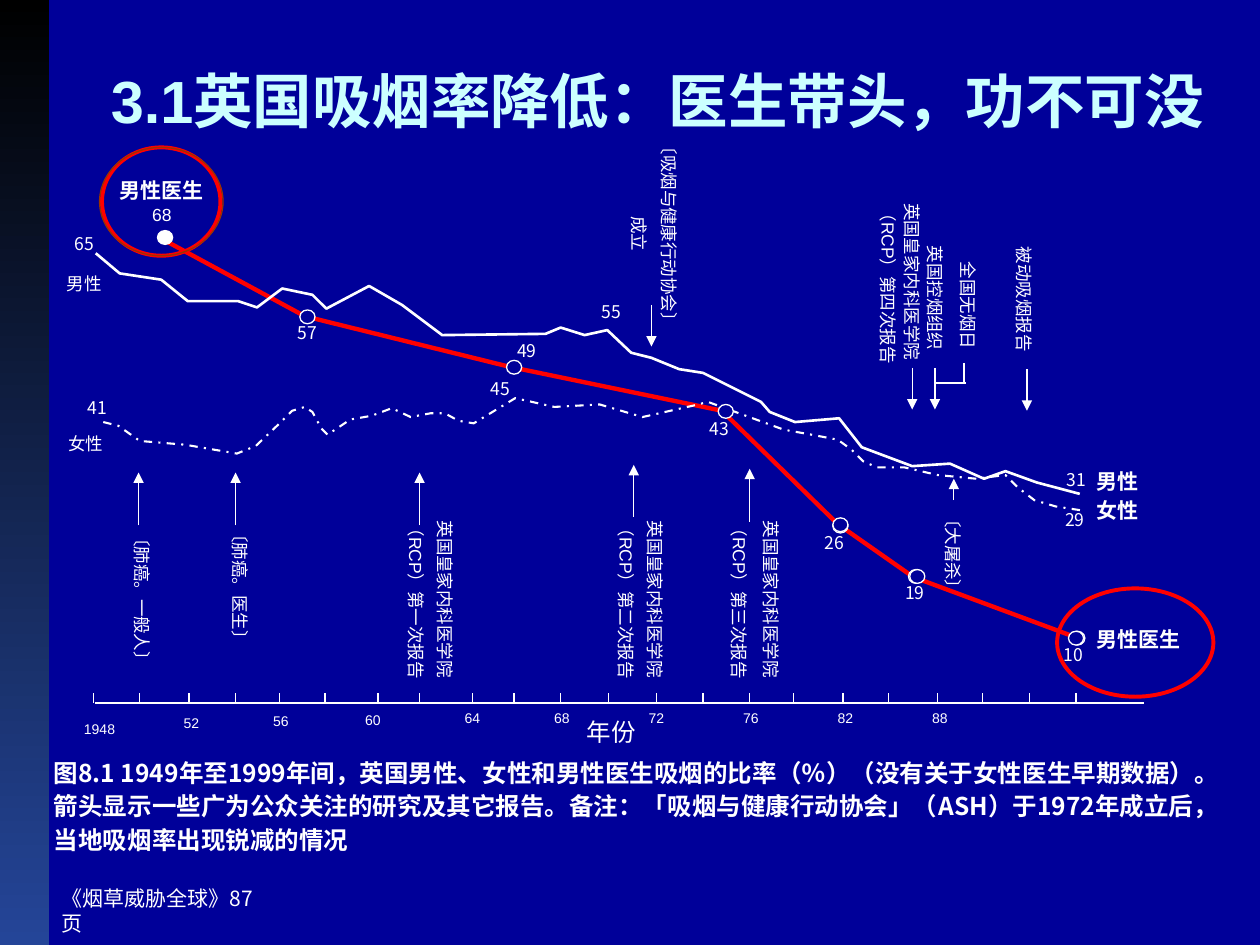
from dataclasses import dataclass

from lxml import etree
from pptx import Presentation
from pptx import util as u
from pptx.dml.color import RGBColor
from pptx.enum import dml, shapes, text
from pptx.oxml import ns

Inches = u.Inches


@dataclass(frozen=True)
class Theme:
    """Colours, fonts and type sizes of the slide."""
    background: str = "000099"
    ink: str = "FFFFFF"
    title: str = "CCFFFF"
    doctors: str = "FF0000"
    brown: str = "993300"
    bar_top: str = "000000"
    bar_bottom: str = "244598"
    latin: str = "Arial"
    chinese: str = "Noto Sans CJK SC"
    tick_size: int = 8
    label_size: int = 10
    name_size: int = 12
    caption_size: int = 14
    title_size: int = 34


THEME = Theme()

DOCTORS = [(1.33, 1.92), (2.42, 2.51), (4.04, 2.91), (5.73, 3.26), (6.65, 4.16), (7.25, 4.58), (8.49, 5.04)]
MEN = [(0.76, 2.01), (0.95, 2.17), (1.28, 2.22), (1.49, 2.39), (1.89, 2.39), (2.04, 2.44), (2.24, 2.29),
       (2.48, 2.34), (2.59, 2.45), (2.93, 2.27), (3.19, 2.42), (3.51, 2.66), (4.33, 2.65), (4.45, 2.6),
       (4.64, 2.66), (4.82, 2.62), (5.01, 2.8), (5.17, 2.84), (5.39, 2.93), (5.58, 2.96), (6.04, 3.19),
       (6.11, 3.27), (6.31, 3.35), (6.66, 3.32), (6.84, 3.55), (7.24, 3.7), (7.54, 3.68), (7.81, 3.8),
       (7.98, 3.74), (8.23, 3.83), (8.57, 3.92)]
WOMEN = [(0.82, 3.35), (0.94, 3.38), (1.11, 3.5), (1.47, 3.53), (1.88, 3.6), (2.03, 3.54), (2.23, 3.35),
         (2.32, 3.26), (2.42, 3.23), (2.48, 3.27), (2.55, 3.4), (2.6, 3.45), (2.78, 3.33), (2.95, 3.3),
         (3.11, 3.24), (3.26, 3.31), (3.42, 3.28), (3.53, 3.28), (3.64, 3.34), (3.76, 3.36), (4.09, 3.16),
         (4.4, 3.23), (4.76, 3.21), (5.1, 3.31), (5.5, 3.22), (5.62, 3.19), (6.22, 3.41), (6.44, 3.45),
         (6.65, 3.49), (6.76, 3.57), (6.85, 3.66), (6.96, 3.71), (7.18, 3.71), (7.44, 3.77), (7.75, 3.8),
         (7.98, 3.77), (8.08, 3.87), (8.21, 3.97), (8.38, 4.02), (8.58, 4.05)]
MARKERS = [(2.38, 2.46), (4.02, 2.86), (5.7, 3.21), (6.61, 4.12), (6.61, 4.11),
           (7.21, 4.52), (7.22, 4.52), (8.49, 5.01), (8.48, 5.01)]
ARROWS = [(8.15, 2.93, 3.26), (7.42, 2.92, 3.25), (7.24, 2.92, 3.25), (5.17, 2.42, 2.75), (1.1, 4.17, 3.75),
          (1.87, 4.17, 3.75), (3.33, 4.17, 3.75), (5.03, 4.1, 3.69), (5.95, 4.14, 3.72), (7.57, 3.97, 3.8)]
TICKS = [0.74, 1.11, 1.5, 1.87, 2.22, 2.58, 3, 3.33, 3.75, 4.08, 4.45, 4.83, 5.21, 5.58, 5.95, 6.3,
         6.69, 7.05, 7.44, 7.8, 8.17, 8.54]
YEARS = [("1948", 0.33, 5.67), ("52", 1.06, 5.62), ("56", 1.77, 5.61), ("60", 2.5, 5.6), ("64", 3.29, 5.58),
         ("68", 4, 5.58), ("72", 4.75, 5.58), ("76", 5.5, 5.58), ("82", 6.25, 5.58), ("88", 7, 5.58)]
VALUES = [("65", 0.38, 1.8), ("男性", 0.38, 2.12), ("41", 0.48, 3.1), ("女性", 0.39, 3.39), ("57", 2.15, 2.51),
          ("55", 4.56, 2.34), ("49", 3.89, 2.65), ("45", 3.68, 2.95), ("43", 5.42, 3.27), ("26", 6.33, 4.17),
          ("19", 6.97, 4.57), ("10", 8.23, 5.06), ("31", 8.25, 3.67), ("29", 8.24, 3.99)]
COLLEGE = "英国皇家内科医学院"
EVENTS = [(["全国无烟日"], 7.22, 2.29, 0.92, 0.27), (["被动吸烟报告"], 7.59, 2.24, 1.08, 0.27),
          (["〔吸烟与健康行动协会〕", "成立"], 4.1, 1.47, 1.92, 0.77), (["英国控烟组织"], 6.88, 2.23, 1.08, 0.27),
          (["〔大屠杀〕"], 6.96, 4.26, 1.21, 0.27), (["〔肺癌。一般人〕"], 0.38, 4.62, 1.5, 0.27),
          (["〔肺癌。医生〕"], 1.16, 4.52, 1.5, 0.27)]
REPORTS = [("一", 2.78, 4.62, 2.55, 4.62), ("二", 4.45, 4.62, 4.22, 4.62),
           ("三", 5.37, 4.62, 5.12, 4.62), ("四", 6.49, 2.1, 6.3, 2.12)]
CAPTION = ("图8.1 1949年至1999年间，英国男性、女性和男性医生吸烟的比率（％）（没有关于女性医生早期数据）。"
           "箭头显示一些广为公众关注的研究及其它报告。备注：「吸烟与健康行动协会」（ASH）于1972年成立后，"
           "当地吸烟率出现锐减的情况")


def color(value):
    """Turn a hex value into a colour."""
    return RGBColor.from_string(value)


def style_line(shape, line_color, width):
    """Set the colour and width of an outline."""
    shape.line.color.rgb = color(line_color)
    shape.line.width = u.Pt(width)


def style_paragraph(paragraph, size, font, bold, ink):
    """Format every run for Latin and Chinese glyphs."""
    for run in paragraph.runs:
        run.font.size, run.font.name, run.font.bold = u.Pt(size), font, bold
        run.font.color.rgb = color(ink)
        east_asian = etree.SubElement(run.font._element, ns.qn("a:ea"))
        east_asian.set("typeface", THEME.chinese)


def add_text(slide, lines, left, top, width, height, size, font=THEME.latin, bold=False, ink=THEME.ink,
             align=text.PP_ALIGN.CENTER, spacing=None, rotation=0):
    """Add a text box with one paragraph per line."""
    shape = slide.shapes.add_textbox(Inches(left), Inches(top), Inches(width), Inches(height))
    shape.rotation = rotation
    frame = shape.text_frame
    frame.text = "\n".join(lines)
    frame.word_wrap = True
    frame.auto_size = text.MSO_AUTO_SIZE.SHAPE_TO_FIT_TEXT
    for index, paragraph in enumerate(frame.paragraphs):
        paragraph.alignment = align
        if spacing:
            paragraph.line_spacing = spacing
        if index:
            paragraph.space_before = u.Pt(size / 2)
        style_paragraph(paragraph, size, font, bold, ink)
    return shape


def add_ellipse(slide, left, top, width, height, line_color, line_width, fill=None):
    """Add an outlined ellipse, hollow unless a fill is given."""
    shape = slide.shapes.add_shape(shapes.MSO_SHAPE.OVAL, Inches(left), Inches(top), Inches(width), Inches(height))
    shape.shadow.inherit = False
    if fill:
        shape.fill.solid()
        shape.fill.fore_color.rgb = color(fill)
    else:
        shape.fill.background()
    style_line(shape, line_color, line_width)


def add_marker(slide, left, top, fill=THEME.background):
    """Add a small data point."""
    add_ellipse(slide, left, top, 0.12, 0.11, THEME.ink, 0.75, fill)


def add_curve(slide, points, line_color, width, dash=None):
    """Add an open polyline through the points."""
    start, *rest = [(Inches(x), Inches(y)) for x, y in points]
    builder = slide.shapes.build_freeform(*start)
    builder.add_line_segments(rest, close=False)
    shape = builder.convert_to_shape()
    shape.shadow.inherit = False
    shape.fill.background()
    style_line(shape, line_color, width)
    shape.line.dash_style = dash


def add_line(slide, x1, y1, x2, y2, width=0.75, arrow=False):
    """Add a straight line, with an arrowhead at its end if wanted."""
    connector = slide.shapes.add_connector(shapes.MSO_CONNECTOR.STRAIGHT, Inches(x1), Inches(y1),
                                           Inches(x2), Inches(y2))
    style_line(connector, THEME.ink, width)
    if arrow:
        etree.SubElement(connector.line._get_or_add_ln(), ns.qn("a:tailEnd")).set("type", "triangle")
    etree.SubElement(connector._element.spPr, ns.qn("a:effectLst"))


def add_side_bar(slide):
    """Add the gradient bar on the left edge."""
    bar = slide.shapes.add_shape(shapes.MSO_SHAPE.RECTANGLE, 0, 0, Inches(0.39), Inches(7.5))
    bar.shadow.inherit = False
    bar.line.fill.background()
    bar.fill.gradient()
    bar.fill.gradient_angle = 270
    for stop, value in zip(bar.fill.gradient_stops, (THEME.bar_top, THEME.bar_bottom)):
        stop.color.rgb = color(value)


def add_title(slide):
    """Add the slide title."""
    title = add_text(slide, ["3.1英国吸烟率降低：医生带头，功不可没"], 0.83, 0.2, 9.02, 1.19, THEME.title_size,
                     bold=True, ink=THEME.title, align=text.PP_ALIGN.LEFT)
    frame = title.text_frame
    frame.auto_size = text.MSO_AUTO_SIZE.NONE
    frame.vertical_anchor = text.MSO_ANCHOR.MIDDLE
    frame.margin_left, frame.margin_right = Inches(0.05), Inches(0.01)


def add_curves(slide):
    """Add the three smoking-rate curves with their markers."""
    add_ellipse(slide, 8.39, 4.67, 1.24, 0.86, THEME.doctors, 2.25)
    add_ellipse(slide, 0.81, 1.17, 0.94, 0.86, THEME.doctors, 2.25)
    add_curve(slide, DOCTORS, THEME.doctors, 2.5)
    add_ellipse(slide, 0.79, 1.17, 0.98, 0.86, THEME.brown, 0.75)
    add_curve(slide, MEN, THEME.ink, 1.5)
    add_curve(slide, WOMEN, THEME.ink, 1.2, dml.MSO_LINE.DASH_DOT)
    add_marker(slide, 1.25, 1.83, THEME.ink)
    for left, top in MARKERS:
        add_marker(slide, left, top)


def add_events(slide):
    """Add the rotated event labels and their arrows."""
    for x, start, end in ARROWS:
        add_line(slide, x, start, x, end, arrow=True)
    add_line(slide, 7.65, 2.88, 7.65, 3.04)
    add_line(slide, 7.43, 3.04, 7.67, 3.04)
    for lines, *box in EVENTS:
        add_text(slide, lines, *box, THEME.label_size, rotation=90)
    for number, left, top, report_left, report_top in REPORTS:
        add_text(slide, [COLLEGE], left, top, 1.5, 0.27, THEME.label_size, rotation=90)
        add_text(slide, [f"（RCP）第{number}次报告"], report_left, report_top, 1.5, 0.27, THEME.label_size, rotation=90)


def add_labels(slide):
    """Add the values and names beside the curves."""
    for label, left, top in VALUES:
        add_text(slide, [label], left, top, 0.58, 0.27, THEME.label_size, THEME.chinese)
    for label, top in (("男性", 3.67), ("女性", 3.9)):
        add_text(slide, [label], 8.58, top, 0.58, 0.3, THEME.name_size, THEME.chinese, True)
    start = add_text(slide, ["男性医生", "68"], 0.45, 1.44, 1.67, 0.39, THEME.name_size, bold=True, spacing=0.55)
    value = start.text_frame.paragraphs[1].runs[0].font
    value.size, value.bold = u.Pt(THEME.label_size), False
    add_text(slide, ["男性医生"], 8.2, 5, 1.67, 0.21, THEME.name_size, bold=True, spacing=0.55)


def add_axis(slide):
    """Add the year axis with ticks and labels."""
    add_line(slide, 0.75, 5.58, 9.08, 5.58, 1.5)
    for x in TICKS:
        add_line(slide, x, 5.5, x, 5.58)
    for year, left, top in YEARS:
        add_text(slide, [year], left, top, 0.92, 0.23, THEME.tick_size)
    add_text(slide, ["年份"], 4.39, 5.64, 0.92, 0.33, THEME.caption_size)


def main():
    """Build and save the slide."""
    presentation = Presentation()
    presentation.slide_width, presentation.slide_height = Inches(10), Inches(7.5)
    slide = presentation.slides.add_slide(presentation.slide_layouts[6])
    slide.background.fill.solid()
    slide.background.fill.fore_color.rgb = color(THEME.background)
    add_side_bar(slide)
    add_curves(slide)
    add_events(slide)
    add_labels(slide)
    add_axis(slide)
    add_text(slide, [CAPTION], 0.33, 5.93, 9.5, 0.9, THEME.caption_size, THEME.chinese, True,
             align=text.PP_ALIGN.LEFT, spacing=1.15)
    add_text(slide, ["《烟草威胁全球》87页"], 0.39, 6.98, 1.87, 0.3, THEME.name_size, THEME.chinese,
             align=text.PP_ALIGN.LEFT)
    add_title(slide)
    presentation.save("out.pptx")


if __name__ == "__main__":
    main()
